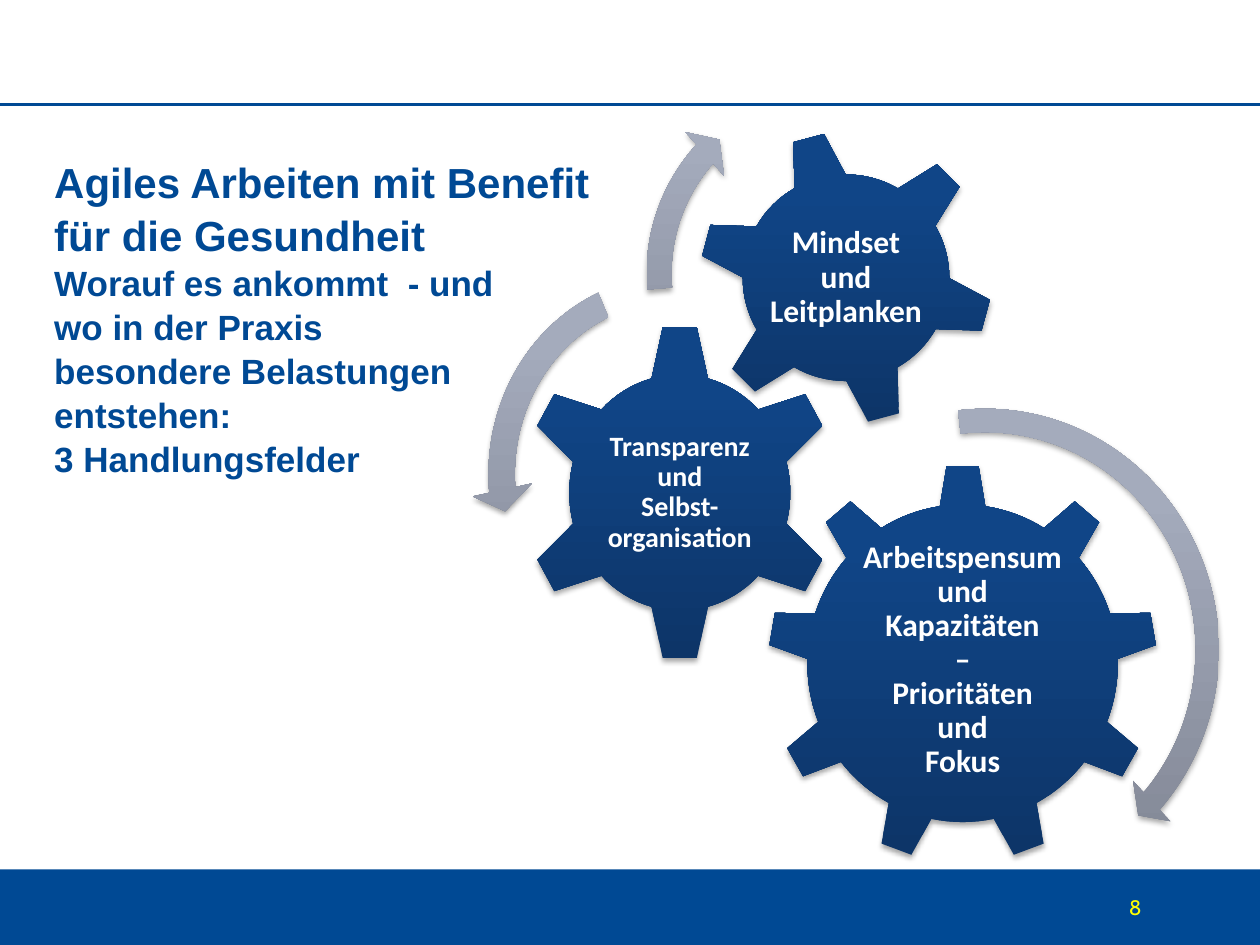
from copy import deepcopy
from math import cos, radians, sin

from lxml import etree
from pptx import Presentation
from pptx.dml.color import RGBColor as Rgb
from pptx.enum.shapes import MSO_CONNECTOR as Conn, MSO_SHAPE as Kind
from pptx.enum.text import MSO_ANCHOR as Anchor, PP_ALIGN as Align
from pptx.oxml.ns import qn
from pptx.util import Inches, Pt

BLUE = Rgb(0x00, 0x49, 0x94)
WHITE = Rgb(0xFF, 0xFF, 0xFF)
YELLOW = Rgb(0xFF, 0xFF, 0x00)
NAVY = [(0, Rgb(0x0D, 0x35, 0x68)), (0.8, Rgb(0x10, 0x45, 0x87)),
        (1, Rgb(0x0E, 0x45, 0x8A))]
GREY = [(0, Rgb(0x7E, 0x83, 0x91)), (0.8, Rgb(0xA4, 0xAB, 0xBC)),
        (1, Rgb(0xA4, 0xAB, 0xBE))]

TITLE = """Agiles Arbeiten mit Benefit
für die Gesundheit
Worauf es ankommt  - und
wo in der Praxis
besondere Belastungen
entstehen:
3 Handlungsfelder"""
LOAD = "Arbeitspensum\nund\nKapazitäten\n–\nPrioritäten\nund\nFokus"
SELF = "Transparenz und\nSelbst-organisation"
MIND = "Mindset\nund Leitplanken"


def style(run, face, size, color, bold=True):
    """Set the font of one run."""
    font = run.font
    font.name, font.size, font.bold = face, Pt(size), bold
    font.color.rgb = color


def pad(frame, left, top, right, low):
    """Set the insets of a text frame in inches and wrap its text."""
    frame.margin_left, frame.margin_top = Inches(left), Inches(top)
    frame.margin_right, frame.margin_bottom = Inches(right), Inches(low)
    frame.word_wrap = True


def shade(shape, stops):
    """Give a shape an upward gradient, no outline and a soft shadow."""
    fill = shape.fill
    fill.gradient()
    fill.gradient_angle = 90
    props = shape._element.spPr
    group = props.find(qn("a:gradFill")).find(qn("a:gsLst"))
    group.append(deepcopy(group[0]))
    for stop, (place, color) in zip(fill.gradient_stops, stops):
        stop.position = place
        stop.color.rgb = color
    shape.line.fill.background()
    shape.shadow.inherit = False
    glow = etree.SubElement(props.find(qn("a:effectLst")), qn("a:outerShdw"),
                            blurRad=str(Pt(3.1)), dist=str(Pt(1.8)),
                            dir="5400000", rotWithShape="0")
    tint = etree.SubElement(glow, qn("a:srgbClr"), val="000000")
    etree.SubElement(tint, qn("a:alpha"), val="35000")


def gear(slide, box, teeth, turn, root, foot, tip, text, size, inset):
    """Draw a toothed wheel in an ellipse's box, with centred text."""
    left, top, wide, high = box

    def spot(angle, reach):
        """Return the point at an angle from the top, clockwise."""
        turned = radians(angle)
        return (Inches(left + wide / 2 * (1 + reach * sin(turned))),
                Inches(top + high / 2 * (1 - reach * cos(turned))))

    step, parts = 360 / teeth, 8
    gap = step - 2 * foot
    dots = []
    for tooth in range(teeth):
        mid = turn + tooth * step
        dots += [spot(mid - tip, 1), spot(mid + tip, 1)]
        dots += [spot(mid + foot + gap * part / parts, root)
                 for part in range(parts + 1)]
    pen = slide.shapes.build_freeform(*dots[0], scale=1.0)
    pen.add_line_segments(dots[1:], close=True)
    shape = pen.convert_to_shape()
    shade(shape, NAVY)
    frame = shape.text_frame
    pad(frame, *[inset] * 4)
    frame.vertical_anchor = Anchor.MIDDLE
    para = frame.paragraphs[0]
    para.text = text
    para.alignment, para.line_spacing = Align.CENTER, 0.9
    for run in para.runs:
        style(run, "Calibri", size, WHITE)


def arrow(slide, kind, box, turns):
    """Draw a curved arrow in a box."""
    shape = slide.shapes.add_shape(kind, *map(Inches, box))
    for index, value in enumerate(turns):
        shape.adjustments[index] = value
    shade(shape, GREY)


def frame_page(slide, wide, high):
    """Draw the top rule, the bottom band and the page number."""
    rule = slide.shapes.add_connector(Conn.STRAIGHT, 0, Inches(0.83),
                                      Inches(wide), Inches(0.83))
    rule.line.color.rgb, rule.line.width = BLUE, Pt(2)
    etree.SubElement(rule._element.spPr, qn("a:effectLst"))
    band = slide.shapes.add_shape(Kind.RECTANGLE, 0, Inches(high - 0.6),
                                  Inches(wide), Inches(0.6))
    band.fill.solid()
    band.fill.fore_color.rgb = BLUE
    band.line.fill.background()
    band.shadow.inherit = False
    label = slide.shapes.add_textbox(*map(Inches, (7.72, 7.05, 1.34, 0.4)))
    pad(label.text_frame, 0.1, 0.05, 0, 0.05)
    para = label.text_frame.paragraphs[0]
    para.text, para.alignment = "8", Align.RIGHT
    style(para.runs[0], "Cabin", 12, YELLOW, False)


def head(slide, box):
    """Place the title, two large lines above smaller ones."""
    title = slide.shapes.title
    title.left, title.top, title.width, title.height = map(Inches, box)
    frame = title.text_frame
    pad(frame, 0, 0, 0, 0)
    frame.vertical_anchor = Anchor.TOP
    para = frame.paragraphs[0]
    para.text = TITLE
    para.alignment, para.line_spacing = Align.LEFT, 1.05
    para.space_before = Pt(0)
    for index, run in enumerate(para.runs):
        style(run, "Arial", 24 if index < 2 else 20, BLUE)


def wheels(slide):
    """Place the three gears with their arrows."""
    gear(slide, (6.1, 3.69, 3.08, 3.15), 9, 0, 0.8, 8.4, 4.7, LOAD, 18, 0.68)
    arrow(slide, Kind.CIRCULAR_ARROW, (5.84, 3.12, 3.96, 4.07),
          (0.047, 2.99, 25.401, 158.107, 0.055))
    arrow(slide, Kind.LEFT_CIRCULAR_ARROW, (3.74, 2.05, 3.22, 3.43),
          (0.065, 4.3, 104.891, 148.378, 0.075))
    six = 0.71, 14.8, 6.3
    gear(slide, (4.16, 2.59, 2.47, 2.64), 6, 0, *six, SELF, 16, 0.49)
    gear(slide, (5.56, 1.05, 2.31, 2.31), 6, 45, *six, MIND, 18, 0.5)
    arrow(slide, Kind.CIRCULAR_ARROW, (5, 0.52, 3.3, 3.3),
          (0.06, 3.941, 133.138, 105.082, 0.07))


def main():
    """Build and save the deck."""
    deck = Presentation()
    deck.slide_width, deck.slide_height = Inches(10), Inches(7.5)
    slide = deck.slides.add_slide(deck.slide_layouts[5])
    frame_page(slide, 10, 7.5)
    head(slide, (0.43, 1.22, 8.11, 0.8))
    wheels(slide)
    deck.save("out.pptx")


if __name__ == "__main__":
    main()
